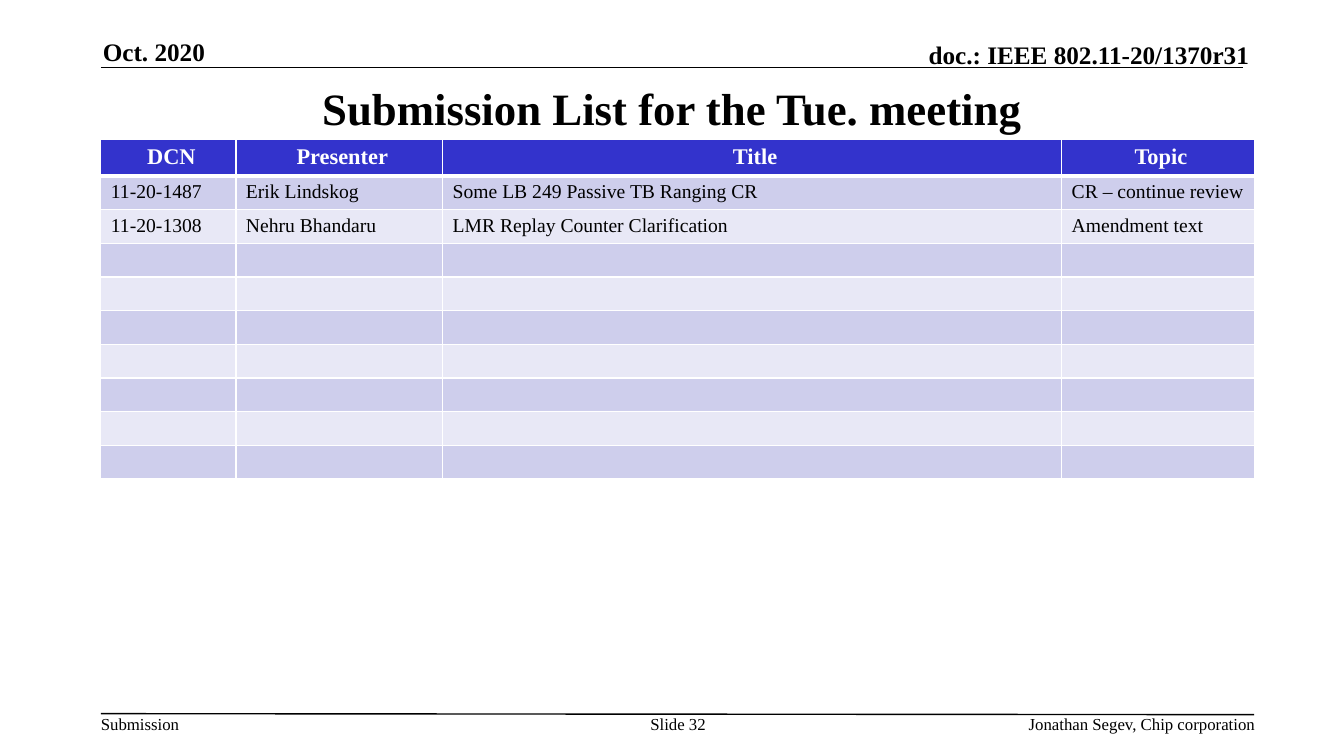
from lxml.etree import SubElement
from pptx import Presentation
from pptx.dml.color import RGBColor
from pptx.enum.shapes import MSO_CONNECTOR
from pptx.enum.text import MSO_ANCHOR, PP_ALIGN
from pptx.oxml import parse_xml
from pptx.oxml.ns import nsdecls, qn
from pptx.util import Inches, Pt

BLACK = RGBColor(0x00, 0x00, 0x00)
WHITE = RGBColor(0xFF, 0xFF, 0xFF)
HEADER_BLUE = RGBColor(0x33, 0x33, 0xCC)
BANDS = [RGBColor(0xE8, 0xE8, 0xF6), RGBColor(0xCE, 0xCE, 0xEC)]
FONT = "Times New Roman"
LEFT, RIGHT = 1, 12.44
HEADER_Y, FOOTER_Y = 0.67, 7.08

prs = Presentation()
prs.slide_width, prs.slide_height = Inches(13.33), Inches(7.5)
s = prs.slides.add_slide(prs.slide_layouts[6])


def write(tf, text, size=12, bold=False, color=BLACK, align=PP_ALIGN.LEFT):
    p = tf.paragraphs[0]
    p.alignment = align
    if text:
        r = p.add_run()
        r.text = text
        r.font.name, r.font.size, r.font.bold = FONT, Pt(size), bold
        r.font.color.rgb = color
    else:
        end = SubElement(p._p, qn("a:endParaRPr"), sz=str(size * 100))
        SubElement(end, qn("a:latin"), typeface=FONT)


def set_borders(cell, top, bottom):
    tc_pr = cell._tc.get_or_add_tcPr()
    for i, (side, width) in enumerate(zip("LRTB", (1, 1, top, bottom))):
        tc_pr.insert(i, parse_xml(
            f'<a:ln{side} {nsdecls("a")} w="{Pt(width)}"><a:solidFill>'
            f'<a:srgbClr val="{WHITE}"/></a:solidFill></a:ln{side}>'))


# Header and footer rules
for x2, y1, y2 in [(12.33, HEADER_Y, HEADER_Y), (RIGHT, FOOTER_Y, FOOTER_Y + 0.01)]:
    rule = s.shapes.add_connector(
        MSO_CONNECTOR.STRAIGHT, Inches(LEFT), Inches(y1), Inches(x2), Inches(y2))
    rule.line.color.rgb = BLACK
    rule.line.width = Pt(1)
    SubElement(rule._element.spPr, qn("a:effectLst"))

# Title, header and footer texts
heading = dict(size=18, bold=True)
texts = [
    ("Oct. 2020", 1.02, 0.36, 2.73, 0.3, MSO_ANCHOR.BOTTOM, heading),
    ("doc.: IEEE 802.11-20/1370r31", 7.29, 0.39, 5.1, 0.3, MSO_ANCHOR.BOTTOM,
     dict(heading, align=PP_ALIGN.RIGHT)),
    ("Submission List for the Tue. meeting", LEFT, 0.75, 11.33, 0.64, MSO_ANCHOR.MIDDLE,
     dict(size=32, bold=True, align=PP_ALIGN.CENTER)),
    ("Submission", LEFT, FOOTER_Y, 0.79, 0.2, MSO_ANCHOR.TOP, {}),
    ("Slide 32", 6.34, FOOTER_Y, 0.77, 0.2, MSO_ANCHOR.TOP, dict(align=PP_ALIGN.CENTER)),
    ("Jonathan Segev, Chip corporation", 7.81, FOOTER_Y, 4.64, 0.2, MSO_ANCHOR.TOP,
     dict(align=PP_ALIGN.RIGHT)),
]
for text, x, y, w, h, anchor, style in texts:
    tf = s.shapes.add_textbox(Inches(x), Inches(y), Inches(w), Inches(h)).text_frame
    tf.word_wrap = True
    tf.vertical_anchor = anchor
    tf.margin_left = tf.margin_right = tf.margin_top = tf.margin_bottom = 0
    write(tf, text, **style)

# Submission table
COLUMN_WIDTHS = [1.34, 2.05, 6.14, 1.91]
HEADER_HEIGHT, ROW_HEIGHT = 0.34, 0.31
EMPTY_ROWS = 7
rows = [
    ["DCN", "Presenter", "Title", "Topic"],
    ["11-20-1487", "Erik Lindskog", "Some LB 249 Passive TB Ranging CR", "CR – continue review"],
    ["11-20-1308", "Nehru Bhandaru", "LMR Replay Counter Clarification", "Amendment text"],
] + [[""] * len(COLUMN_WIDTHS)] * EMPTY_ROWS

table = s.shapes.add_table(
    len(rows), len(COLUMN_WIDTHS), Inches(LEFT), Inches(1.38), Inches(sum(COLUMN_WIDTHS)),
    Inches(HEADER_HEIGHT + ROW_HEIGHT * (len(rows) - 1))).table
for column, width in zip(table.columns, COLUMN_WIDTHS):
    column.width = Inches(width)
for i, row in enumerate(rows):
    is_header = i == 0
    table.rows[i].height = Inches(HEADER_HEIGHT if is_header else ROW_HEIGHT)
    for j, text in enumerate(row):
        cell = table.cell(i, j)
        cell.margin_left = Inches(0.1)
        cell.margin_right = Inches(0.04 if is_header else 0.1)
        cell.margin_top = cell.margin_bottom = Inches(0.05)
        cell.fill.solid()
        cell.fill.fore_color.rgb = HEADER_BLUE if is_header else BANDS[i % 2]
        set_borders(cell, top=3 if i == 1 else 1, bottom=3 if is_header else 1)
        if is_header:
            write(cell.text_frame, text, size=16, bold=True, color=WHITE, align=PP_ALIGN.CENTER)
        else:
            write(cell.text_frame, text, size=14)

prs.save("out.pptx")
